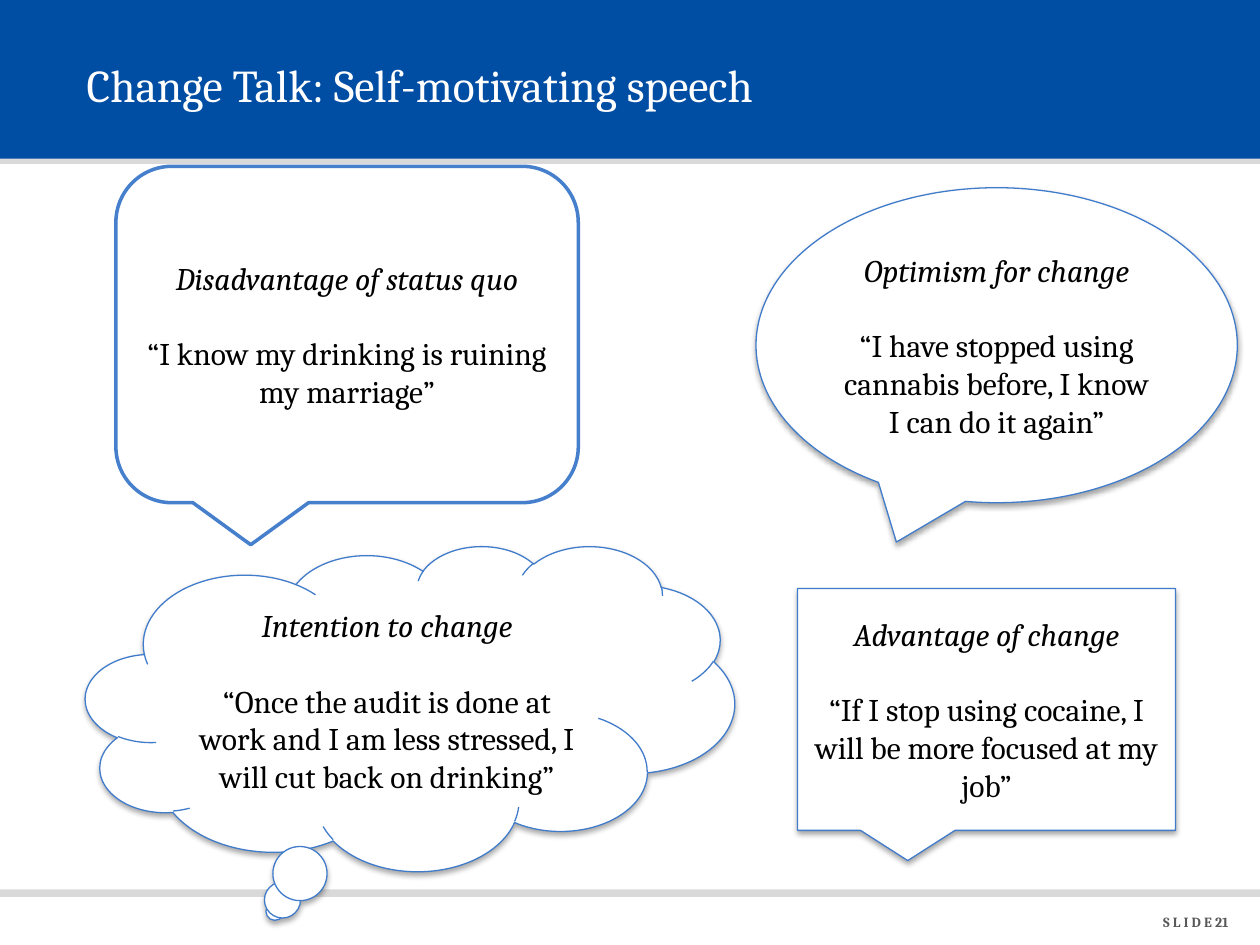
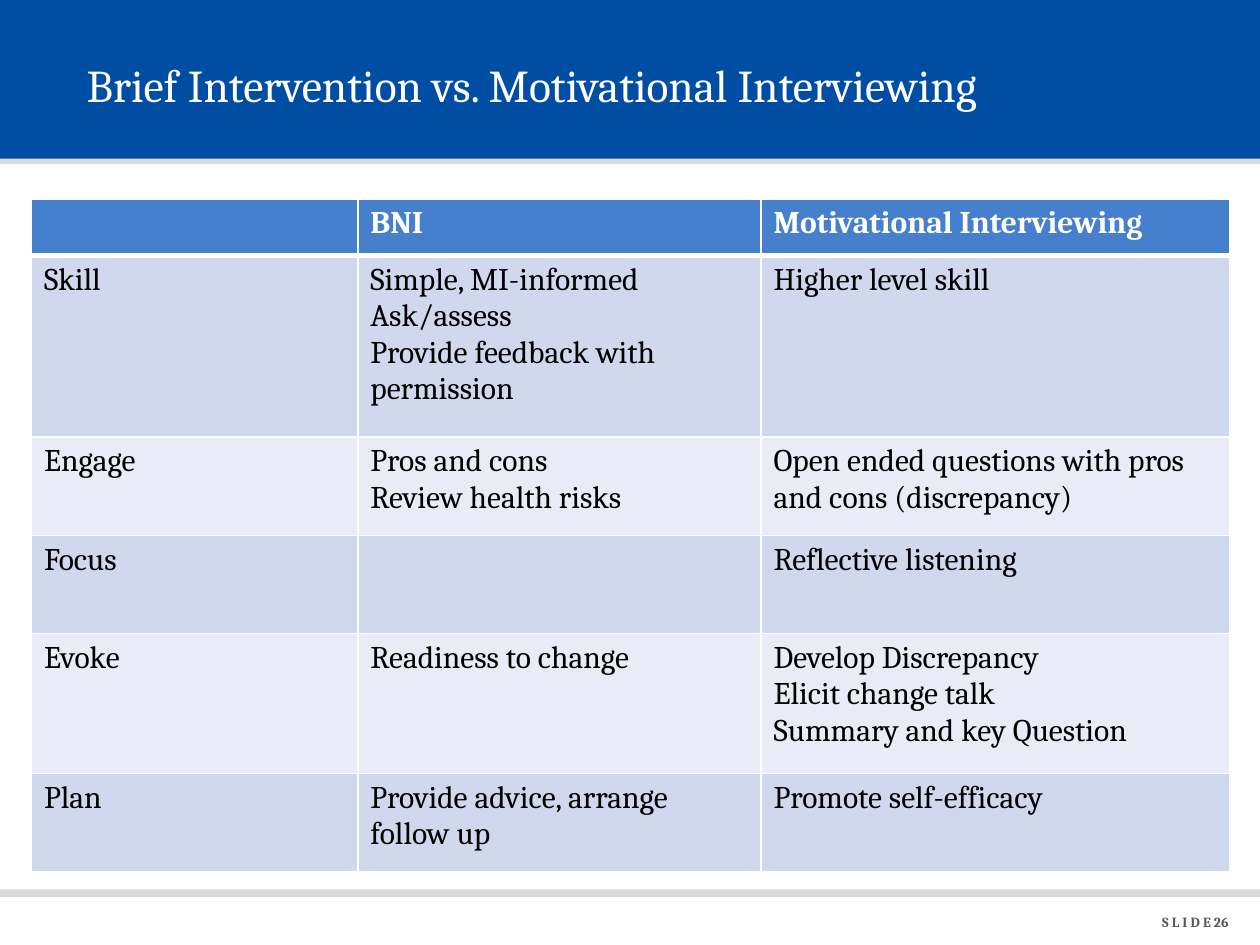
from lxml.etree import SubElement
from pptx import Presentation
from pptx.dml.color import RGBColor
from pptx.enum.shapes import MSO_SHAPE as SHAPE
from pptx.enum.text import MSO_ANCHOR as ANCHOR, PP_ALIGN as ALIGN
from pptx.oxml.ns import qn
from pptx.util import Inches, Pt

# Shared look
FONT = "Cambria"
COLORS = {
    "blue": "004DA4", "grey": "DAD9D9", "footer": "585858",
    "white": "FFFFFF", "black": "000000",
    "outline": "417CCB", "accent": "467FCC",
    "row_dark": "CFD8EC", "row_light": "E9ECF6",
}
BANDS = [  # top, height, colour
    (1.05, 0.25, "grey"),
    (-0.01, 1.27, "blue"),
    (7.06, 0.06, "grey"),
]

# Slide 21: types of change talk
TALK_TITLE = "Change Talk: Self-motivating speech"
CALLOUTS = [  # shape, box, line colour, line width, shadow, heading, quote
    (SHAPE.OVAL_CALLOUT, (6, 1.49, 3.82, 2.5), "outline", 0.75, True,
     "Optimism for change",
     "“I have stopped using cannabis before, I know I can do it again”"),
    (SHAPE.ROUNDED_RECTANGULAR_CALLOUT, (0.92, 1.32, 3.67, 2.67), "accent", 2, False,
     "Disadvantage of status quo",
     "“I know my drinking is ruining my marriage”"),
    (SHAPE.CLOUD_CALLOUT, (0.68, 4.33, 5.15, 2.58), "outline", 0.75, True,
     "Intention to change",
     "“Once the audit is done at work and I am less stressed, "
     "I will cut back on drinking”"),
    (SHAPE.RECTANGULAR_CALLOUT, (6.33, 4.67, 3, 1.92), "outline", 0.75, True,
     "Advantage of change",
     "“If I stop using cocaine, I will be more focused at my job”"),
]

# Slide 26: comparison table, one list of paragraphs per cell
COMPARE_TITLE = "Brief Intervention vs. Motivational Interviewing"
COLUMN_WIDTHS = [2.59, 3.2, 3.72]
ROWS = [  # height, cells
    (0.45, [[], ["BNI"], ["Motivational Interviewing"]]),
    (1.44, [["Skill"],
            ["Simple, MI-informed", "Ask/assess", "Provide feedback with permission"],
            ["Higher level skill"]]),
    (0.78, [["Engage"], ["Pros and cons", "Review health risks"],
            ["Open ended questions with pros and cons (discrepancy)"]]),
    (0.78, [["Focus"], [], ["Reflective listening"]]),
    (1.11, [["Evoke"], ["Readiness to change"],
            ["Develop Discrepancy", "Elicit change talk", "Summary and key Question"]]),
    (0.78, [["Plan"], ["Provide advice, arrange follow up"], ["Promote self-efficacy"]]),
]


def rgb(name):
    return RGBColor.from_string(COLORS[name])


def fill_solid(target, color):
    target.fill.solid()
    target.fill.fore_color.rgb = rgb(color)


def add_run(p, text, size, color, bold=False, italic=False):
    r = p.add_run()
    r.text = text
    font = r.font
    font.name, font.size, font.bold, font.italic = FONT, Pt(size), bold, italic
    font.color.rgb = rgb(color)


def add_paragraph(tf, index):
    return tf.add_paragraph() if index else tf.paragraphs[0]


def add_box(s, shape, box, color):
    sp = s.shapes.add_shape(shape, *map(Inches, box))
    sp.shadow.inherit = False
    fill_solid(sp, color)
    return sp


def add_label(s, box, text, size, color, align=ALIGN.LEFT, bold=False):
    tf = s.shapes.add_textbox(*map(Inches, box)).text_frame
    tf.word_wrap = True
    tf.vertical_anchor = ANCHOR.MIDDLE
    tf.paragraphs[0].alignment = align
    add_run(tf.paragraphs[0], text, size, color, bold)


def add_base(prs, title, number):
    """New slide with bands, title and slide number."""
    s = prs.slides.add_slide(prs.slide_layouts[6])
    for top, height, color in BANDS:
        band = add_box(s, SHAPE.RECTANGLE, (0, top, 10, height), color)
        band.line.fill.background()
    add_label(s, (0.59, 0.17, 8.9, 1), title, 26, "white")
    add_label(s, (8.43, 7.2, 1.42, 0.23), f"S L I D E {number}", 8, "footer",
              ALIGN.RIGHT, bold=True)
    return s


def add_shadow(sp):
    effects = sp._element.spPr.find(qn("a:effectLst"))
    shadow = SubElement(effects, qn("a:outerShdw"), blurRad=str(Pt(3.1)),
                        dist=str(Pt(1.8)), dir="5400000", rotWithShape="0")
    color = SubElement(shadow, qn("a:srgbClr"), val=COLORS["black"])
    SubElement(color, qn("a:alpha"), val="35000")


def add_callout(s, shape, box, line_color, line_width, shadow, heading, quote):
    sp = add_box(s, shape, box, "white")
    sp.line.color.rgb = rgb(line_color)
    sp.line.width = Pt(line_width)
    if shadow:
        add_shadow(sp)
    tf = sp.text_frame
    tf.vertical_anchor = ANCHOR.MIDDLE
    for i, text in enumerate((heading, quote)):
        p = add_paragraph(tf, i)
        p.alignment = ALIGN.CENTER
        if i:
            p.space_before = Pt(21.5)  # one line of air above the quote
        add_run(p, text, 18, "black", italic=i == 0)


def set_borders(cell, bottom):
    tc_pr = cell._tc.get_or_add_tcPr()
    for side, width in (("L", 1), ("R", 1), ("T", 1), ("B", bottom)):
        line = SubElement(tc_pr, qn(f"a:ln{side}"), w=str(Pt(width)))
        fill = SubElement(line, qn("a:solidFill"))
        SubElement(fill, qn("a:srgbClr"), val=COLORS["white"])


def add_comparison(s):
    heights = [height for height, _ in ROWS]
    box = (0.25, 1.58, sum(COLUMN_WIDTHS), sum(heights))
    table = s.shapes.add_table(len(ROWS), len(COLUMN_WIDTHS), *map(Inches, box)).table
    for column, width in zip(table.columns, COLUMN_WIDTHS):
        column.width = Inches(width)
    for i, (height, cells) in enumerate(ROWS):
        table.rows[i].height = Inches(height)
        header = i == 0
        fill = "accent" if header else ("row_light", "row_dark")[i % 2]
        for j, lines in enumerate(cells):
            cell = table.cell(i, j)
            set_borders(cell, 3 if header else 1)
            fill_solid(cell, fill)
            for k, text in enumerate(lines):
                add_run(add_paragraph(cell.text_frame, k), text, 18,
                        "white" if header else "black", bold=header)


def main():
    prs = Presentation()
    prs.slide_width, prs.slide_height = Inches(10), Inches(7.5)

    s = add_base(prs, TALK_TITLE, 21)
    for callout in CALLOUTS:
        add_callout(s, *callout)

    s = add_base(prs, COMPARE_TITLE, 26)
    add_comparison(s)

    prs.save("out.pptx")


if __name__ == "__main__":
    main()
